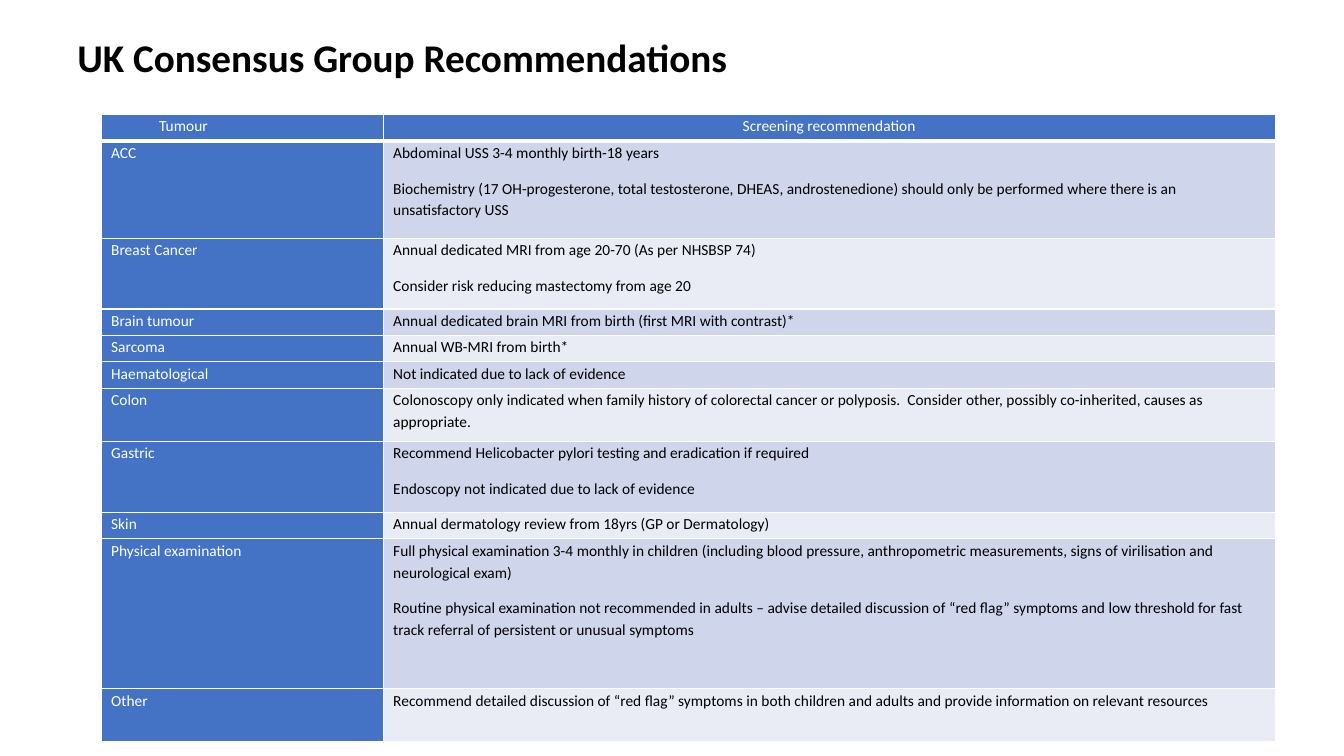
from dataclasses import dataclass

from lxml import etree
from pptx import Presentation
from pptx.dml.color import RGBColor
from pptx.enum.text import MSO_ANCHOR, MSO_AUTO_SIZE, PP_ALIGN
from pptx.oxml.ns import qn
from pptx.util import Pt

LEFT, CENTER = PP_ALIGN.LEFT, PP_ALIGN.CENTER
MIDDLE, NO_FIT = MSO_ANCHOR.MIDDLE, MSO_AUTO_SIZE.NONE
COLORS = {
    "header": "4472C4",
    "odd": "CFD5EA",
    "even": "E9EBF5",
    "light": "FFFFFF",
    "dark": "000000",
}
FONT = "Calibri"
COLUMN_WIDTHS = (201.5, 637.2)
TITLE_FRAME = {"left": Pt(48), "top": Pt(-2), "width": Pt(864), "height": Pt(90)}
TITLE_FORMAT = {"word_wrap": True, "auto_size": NO_FIT, "vertical_anchor": MIDDLE}
CELL_MARGINS = {"margin_left": Pt(7.2), "margin_right": Pt(7.2),
                "margin_top": Pt(0), "margin_bottom": Pt(0)}
CELL_SPACING = {"line_spacing": 1.15, "space_after": Pt(10)}


@dataclass
class Screening:
    tumour: str
    advice: tuple[str, ...]
    height: float = 18.9


ROWS = [
    Screening("Tumour", ("Screening recommendation",)),
    Screening("ACC", (
        "Abdominal USS 3-4 monthly birth-18 years",
        "Biochemistry (17 OH-progesterone, total testosterone, DHEAS, androstenedione) "
        "should only be performed where there is an unsatisfactory USS"), 69.6),
    Screening("Breast Cancer", (
        "Annual dedicated MRI from age 20-70 (As per NHSBSP 74)",
        "Consider risk reducing mastectomy from age 20"), 50.6),
    Screening("Brain tumour", (
        "Annual dedicated brain MRI from birth (first MRI with contrast)*",)),
    Screening("Sarcoma", ("Annual WB-MRI from birth*",)),
    Screening("Haematological", ("Not indicated due to lack of evidence",)),
    Screening("Colon", (
        "Colonoscopy only indicated when family history of colorectal cancer or polyposis.  "
        "Consider other, possibly co-inherited, causes as appropriate.",), 37.9),
    Screening("Gastric", (
        "Recommend Helicobacter pylori testing and eradication if required",
        "Endoscopy not indicated due to lack of evidence"), 50.6),
    Screening("Skin", ("Annual dermatology review from 18yrs (GP or Dermatology)",)),
    Screening("Physical examination", (
        "Full physical examination 3-4 monthly in children (including blood pressure, "
        "anthropometric measurements, signs of virilisation and neurological exam)",
        "Routine physical examination not recommended in adults – advise detailed "
        "discussion of “red flag” symptoms and low threshold for fast track referral of "
        "persistent or unusual symptoms"), 107.2),
    Screening("Other", (
        "Recommend detailed discussion of “red flag” symptoms in both children and adults "
        "and provide information on relevant resources",), 37.9),
]


def apply(target, values: dict) -> None:
    for name, value in values.items():
        setattr(target, name, value)


def add_text(p, text: str, size: float, color: str, bold: bool = False) -> None:
    r = p.add_run()
    r.text = text
    apply(r.font, {"name": FONT, "size": Pt(size), "bold": bold})
    r.font.color.rgb = RGBColor.from_string(COLORS[color])


def set_borders(cell, bottom: float) -> None:
    tc_pr = cell._tc.get_or_add_tcPr()
    sides = {"lnL": 1, "lnR": 1, "lnT": 1, "lnB": bottom}
    for i, (side, width) in enumerate(sides.items()):
        ln = etree.Element(qn(f"a:{side}"), w=str(Pt(width)))
        fill = etree.SubElement(ln, qn("a:solidFill"))
        etree.SubElement(fill, qn("a:srgbClr"), val=COLORS["light"])
        tc_pr.insert(i, ln)


def fill_cell(cell, texts: tuple[str, ...], fill: str, color: str,
              align: PP_ALIGN, bottom: float) -> None:
    apply(cell, CELL_MARGINS)
    cell.fill.solid()
    cell.fill.fore_color.rgb = RGBColor.from_string(COLORS[fill])
    set_borders(cell, bottom)
    tf = cell.text_frame
    for i, text in enumerate(texts):
        p = tf.add_paragraph() if i else tf.paragraphs[0]
        apply(p, CELL_SPACING | {"alignment": align})
        add_text(p, text, 11, color)


def add_title(slide, text: str) -> None:
    sp = slide.shapes.title
    apply(sp, TITLE_FRAME)
    tf = sp.text_frame
    apply(tf, TITLE_FORMAT)
    p = tf.paragraphs[0]
    apply(p, {"alignment": LEFT, "line_spacing": 0.9})
    add_text(p, text, 28, "dark", True)


def add_screening_table(slide, rows: list[Screening]) -> None:
    table = slide.shapes.add_table(
        len(rows), len(COLUMN_WIDTHS), Pt(72.2), Pt(81.6),
        Pt(sum(COLUMN_WIDTHS)), Pt(sum(row.height for row in rows))).table
    for column, width in zip(table.columns, COLUMN_WIDTHS):
        column.width = Pt(width)
    for i, row in enumerate(rows):
        table.rows[i].height = Pt(row.height)
        header = i == 0
        bottom = 3 if header else 1
        band = "header" if header else "odd" if i % 2 else "even"
        fill_cell(table.cell(i, 0), (row.tumour,), "header", "light", LEFT, bottom)
        fill_cell(table.cell(i, 1), row.advice, band, "light" if header else "dark",
                  CENTER if header else LEFT, bottom)
    table.cell(0, 0).margin_left = Pt(41.5)


def main() -> None:
    prs = Presentation()
    apply(prs, {"slide_width": Pt(960), "slide_height": Pt(540)})
    slide = prs.slides.add_slide(prs.slide_layouts[5])
    add_title(slide, "UK Consensus Group Recommendations")
    add_screening_table(slide, ROWS)
    prs.save("out.pptx")


if __name__ == "__main__":
    main()
